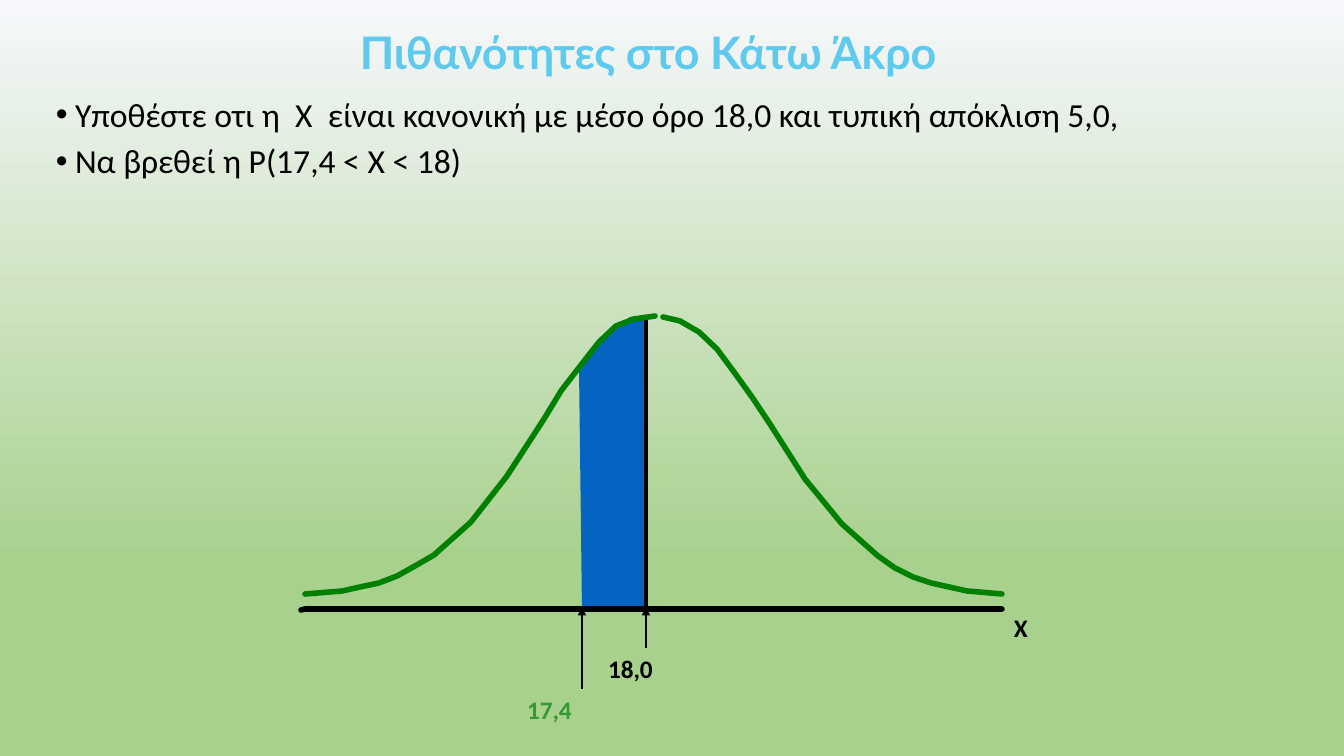
from lxml.etree import SubElement
from pptx import Presentation
from pptx.dml.color import RGBColor
from pptx.enum.shapes import MSO_CONNECTOR
from pptx.enum.text import MSO_ANCHOR, PP_ALIGN
from pptx.oxml.ns import qn
from pptx.util import Pt

# Content, lengths in px
EMU_PER_PX = 914400 / 100.8
SLIDE_SIZE = (1344, 756)
COLORS = {"sky": "F6F8FC", "grass": "A9D18E", "title": "5FCAEE", "ink": "000000",
          "area": "0563C1", "curve": "008000", "value": "339933"}

TITLE = "Πιθανότητες στο Κάτω Άκρο"
BULLETS = [
    "Υποθέστε οτι η  X  είναι κανονική με μέσο όρο 18,0 και τυπική απόκλιση 5,0,",
    "Να βρεθεί η P(17,4 < X < 18)",
]
AXIS_LABELS = [  # text, box, colour
    ("X", (1004, 607, 82, 66), "ink"),
    ("17,4", (517, 689, 126, 66), "value"),
    ("18,0", (598, 648, 126, 66), "ink"),
]

BASE, MEAN_X, VALUE_X = 607, 646, 582
AREA = [(VALUE_X, BASE), (579, 365), (588, 353), (601, 339), (612, 329), (622, 324),
        (630, 317), (MEAN_X, 317), (MEAN_X, BASE)]
LEFT_CURVE = [(305, 594), (342, 591), (360, 587), (379, 583), (397, 576), (415, 566),
              (434, 555), (471, 522), (507, 476), (544, 419), (561, 391), (581, 365),
              (599, 342), (616, 326), (634, 319), (655, 316)]
RIGHT_CURVE = [(1002, 594), (967, 591), (949, 587), (931, 583), (913, 577), (895, 568),
               (878, 556), (842, 524), (805, 479), (770, 424), (752, 397), (734, 372),
               (717, 349), (699, 332), (680, 321), (663, 317)]
AXIS = [(301, 610), (305, 609), (1002, 609)]
MEAN_LINE = [(MEAN_X, 317), (MEAN_X, BASE)]
ARROWS = [[(MEAN_X, 648), (MEAN_X, BASE)], [(VALUE_X, 689), (VALUE_X, BASE)]]


def px(length):
    return round(length * EMU_PER_PX)


def rgb(name):
    return RGBColor.from_string(COLORS[name])


def add_text(page, lines, place, size, color, font="Calibri", bold=False, bullet=False,
             align=PP_ALIGN.LEFT, anchor=MSO_ANCHOR.TOP, margins=(10, 5, 10, 5),
             line_spacing=None, before=0, tracking=None):
    box = page.shapes.add_textbox(*map(px, place))
    frame = box.text_frame
    frame.word_wrap = True
    frame.vertical_anchor = anchor
    (frame.margin_left, frame.margin_top,
     frame.margin_right, frame.margin_bottom) = map(px, margins)
    for index, line in enumerate(lines):
        para = frame.paragraphs[0] if index == 0 else frame.add_paragraph()
        para.alignment = align
        para.line_spacing = line_spacing
        para.space_before = Pt(before)
        if bullet:
            properties = para._p.get_or_add_pPr()
            properties.set("marL", str(px(19)))
            properties.set("indent", str(px(-19)))
            SubElement(properties, qn("a:buFont"), typeface="Arial")
            SubElement(properties, qn("a:buChar"), char="•")
        span = para.add_run()
        span.text = line
        span.font.name = font
        span.font.size = Pt(size)
        span.font.bold = bold
        span.font.color.rgb = rgb(color)
        if tracking is not None:
            span._r.get_or_add_rPr().set("spc", str(tracking))


def add_outline(page, points, fill=None, line=None, width=4):
    builder = page.shapes.build_freeform(*points[0], scale=EMU_PER_PX)
    builder.add_line_segments(points[1:], close=fill is not None)
    shape = builder.convert_to_shape()
    shape.shadow.inherit = False
    if fill:
        shape.fill.solid()
        shape.fill.fore_color.rgb = rgb(fill)
    else:
        shape.fill.background()
    if line:
        shape.line.color.rgb = rgb(line)
        shape.line.width = Pt(width)
        shape.line._get_or_add_ln().set("cap", "rnd")
    else:
        shape.line.fill.background()


def add_line(page, points, width, arrow=False):
    start, end = points
    line = page.shapes.add_connector(MSO_CONNECTOR.STRAIGHT, *map(px, start + end))
    line.line.color.rgb = rgb("ink")
    line.line.width = Pt(width)
    if arrow:
        SubElement(line.line._get_or_add_ln(), qn("a:tailEnd"), type="triangle")
    SubElement(line._element.spPr, qn("a:effectLst"))


def main():
    deck = Presentation()
    deck.slide_width, deck.slide_height = map(px, SLIDE_SIZE)
    page = deck.slides.add_slide(deck.slide_layouts[6])

    # Background, fading downwards
    background = page.background.fill
    background.gradient()
    background.gradient_angle = 270
    for stop, (position, name) in zip(background.gradient_stops,
                                      [(0, "sky"), (0.74, "grass")]):
        stop.position = position
        stop.color.rgb = rgb(name)

    # Title and bullets
    add_text(page, BULLETS, (46, 93, 1226, 118), 24, "ink", bullet=True,
             align=PP_ALIGN.JUSTIFY, line_spacing=0.9, before=7.5)
    add_text(page, [TITLE], (360, 29, 626, 50), 32, "title", font="Lato", bold=True,
             align=PP_ALIGN.JUSTIFY, anchor=MSO_ANCHOR.MIDDLE, margins=(0, 1, 0, 0),
             line_spacing=0.9, before=1.1, tracking=-20)

    # Normal curve with the shaded area
    add_outline(page, AREA, fill="area")
    add_line(page, MEAN_LINE, 2.5)
    for curve in (RIGHT_CURVE, LEFT_CURVE):
        add_outline(page, curve, line="curve")
    add_outline(page, AXIS, line="ink")

    # Axis labels and arrows
    for text, place, color in AXIS_LABELS:
        add_text(page, [text], place, 18, color, bold=True)
    for arrow in ARROWS:
        add_line(page, arrow, 1, arrow=True)

    deck.save("out.pptx")


if __name__ == "__main__":
    main()
